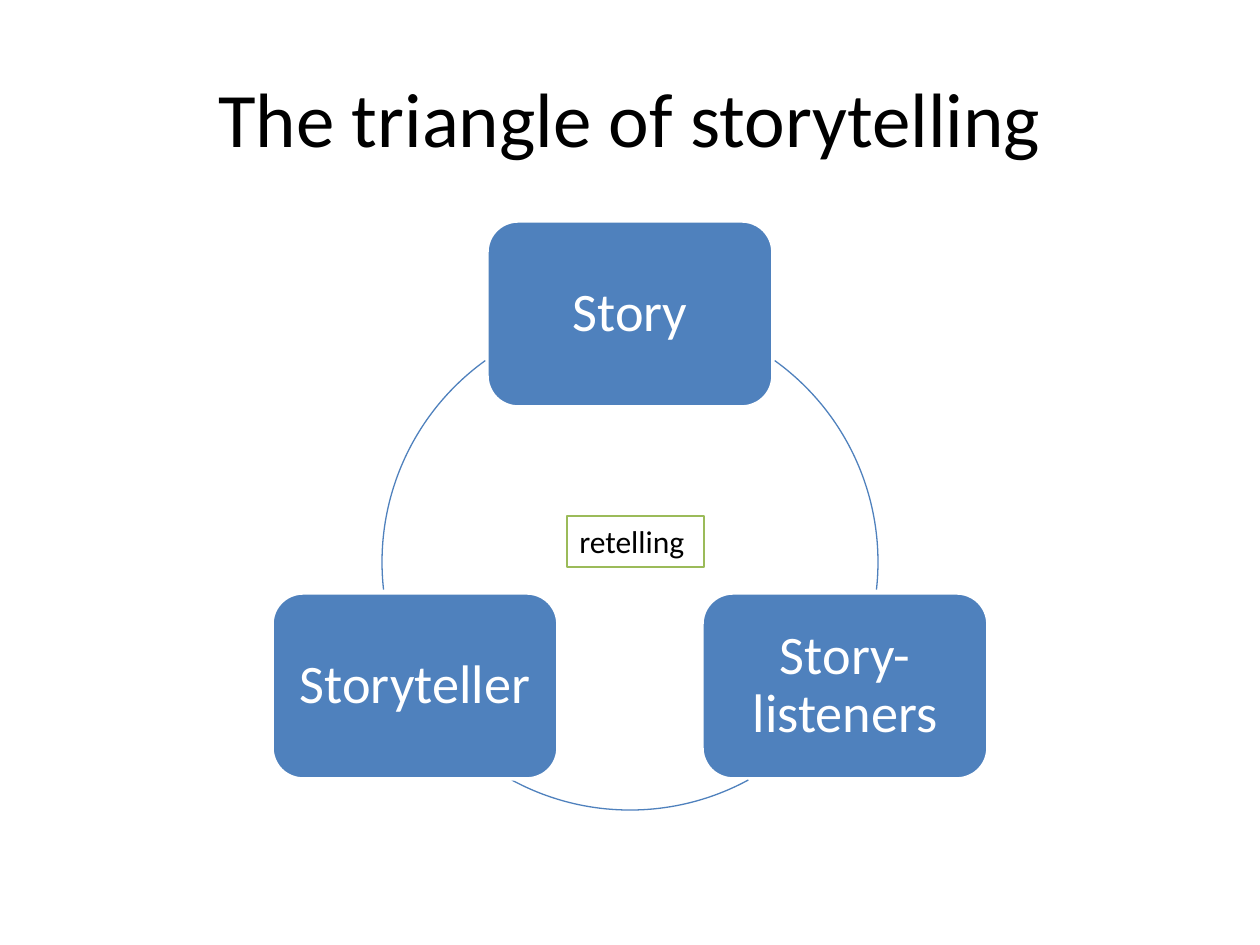
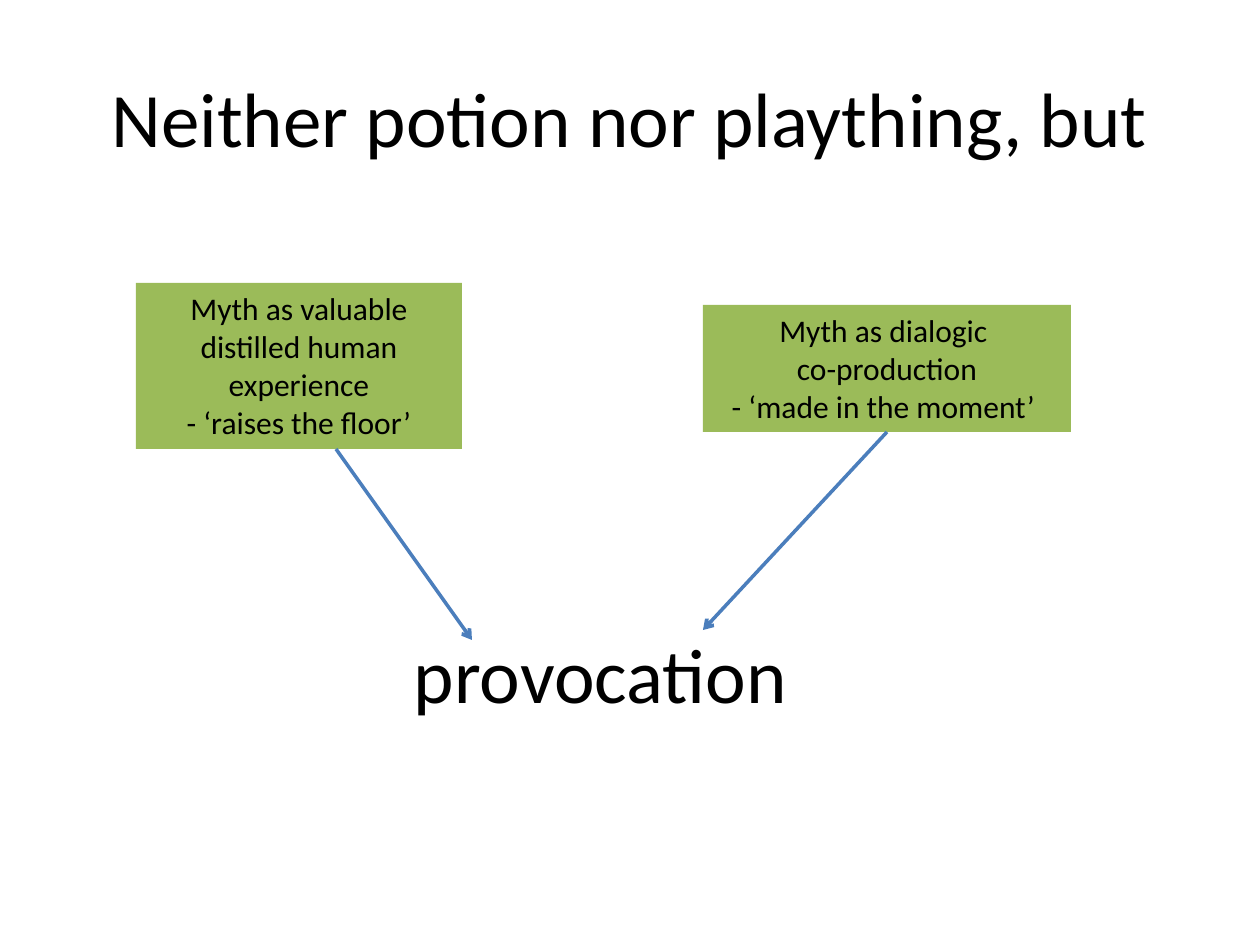
import math
from dataclasses import dataclass

import pptx
import pptx.dml.color
import pptx.enum.shapes
import pptx.enum.text
import pptx.oxml.ns
import pptx.util
from lxml import etree
from pptx.shapes.base import BaseShape
from pptx.slide import Slide

RGB = pptx.dml.color.RGBColor
SHAPE = pptx.enum.shapes.MSO_SHAPE
ALIGN = pptx.enum.text.PP_ALIGN
ANCHOR = pptx.enum.text.MSO_ANCHOR

BLACK = RGB(0x00, 0x00, 0x00)
WHITE = RGB(0xFF, 0xFF, 0xFF)
BLUE = RGB(0x4F, 0x81, 0xBD)
GREEN = RGB(0x9B, 0xBB, 0x59)
STEEL = RGB(0x4B, 0x7E, 0xBC)

FONT = "Calibri"
SCALE = 914400 / 126  # EMU in one px
TITLE = 44
BODY = 18


@dataclass(frozen=True)
class Box:
    x: int
    y: int
    w: int
    h: int


@dataclass(frozen=True)
class Node:
    text: str
    angle: int


@dataclass(frozen=True)
class Arc:
    start: float
    end: float


@dataclass(frozen=True)
class Myth:
    box: Box
    lines: tuple[str, ...]
    start: tuple[int, int]
    end: tuple[int, int]
    joined: bool


CENTRE = (630, 562)
RADIUS = 248
NODES = (Node("Story", -90), Node("Story-listeners", 30), Node("Storyteller", 150))
ARCS = (Arc(305.7, 6.4), Arc(61.5, 118.5), Arc(173.6, 234.3))
MYTHS = (
    Myth(Box(136, 283, 326, 166),
         ("Myth as valuable distilled human experience", "- ‘raises the floor’"),
         (336, 449), (472, 640), False),
    Myth(Box(703, 305, 368, 127),
         ("Myth as dialogic ", "co-production", "- ‘made in the moment’ "),
         (887, 432), (703, 630), True),
)


def px(length: float) -> int:
    return round(length * SCALE)


def place(box: Box) -> tuple[int, int, int, int]:
    return px(box.x), px(box.y), px(box.w), px(box.h)


def write(shape: BaseShape, lines: tuple[str, ...], size: int, colour: RGB = BLACK,
          align: ALIGN = ALIGN.CENTER, anchor: ANCHOR = ANCHOR.TOP) -> None:
    frame = shape.text_frame
    frame.word_wrap = True
    frame.vertical_anchor = anchor
    for i, line in enumerate(lines):
        para = frame.add_paragraph() if i else frame.paragraphs[0]
        para.alignment = align
        run = para.add_run()
        run.text = line
        run.font.name = FONT
        run.font.size = pptx.util.Pt(size)
        run.font.color.rgb = colour


def draw(slide: Slide, kind: SHAPE, box: Box, fill: RGB | None = None,
         line: RGB | None = None, width: float = 1) -> BaseShape:
    """Add a preset shape; a missing colour means no fill or no line."""
    shape = slide.shapes.add_shape(kind, *place(box))
    shape.shadow.inherit = False
    if fill is None:
        shape.fill.background()
    else:
        shape.fill.solid()
        shape.fill.fore_color.rgb = fill
    if line is None:
        shape.line.fill.background()
    else:
        shape.line.color.rgb = line
        shape.line.width = pptx.util.Pt(width)
    return shape


def add_slide(deck: pptx.presentation.Presentation, title: str) -> Slide:
    slide = deck.slides.add_slide(deck.slide_layouts.get_by_name("Title Only"))
    head = slide.shapes.title
    head.left, head.top, head.width, head.height = place(Box(63, 38, 1134, 158))
    write(head, (title,), TITLE, anchor=ANCHOR.MIDDLE)
    return slide


def add_node(slide: Slide, node: Node) -> None:
    """Centre a rounded box on the ring at the node's angle."""
    w, h = 286, 186
    turn = math.radians(node.angle)
    x = round(CENTRE[0] + RADIUS * math.cos(turn) - w / 2)
    y = round(CENTRE[1] + RADIUS * math.sin(turn) - h / 2)
    shape = draw(slide, SHAPE.ROUNDED_RECTANGLE, Box(x, y, w, h), BLUE, WHITE, 2)
    frame = shape.text_frame
    frame.margin_left = frame.margin_right = px(16)
    write(shape, (node.text,), 31, WHITE, anchor=ANCHOR.MIDDLE)
    frame.paragraphs[0].line_spacing = 0.9


def add_arc(slide: Slide, arc: Arc) -> None:
    ring = Box(CENTRE[0] - RADIUS, CENTRE[1] - RADIUS, 2 * RADIUS, 2 * RADIUS)
    shape = draw(slide, SHAPE.ARC, ring, line=BLUE, width=0.75)
    # Angles are stored in 1/60000 degree, adjustments in 1/100000.
    for i, angle in enumerate((arc.start, arc.end)):
        shape.adjustments[i] = angle * 0.6


def add_myth(slide: Slide, myth: Myth) -> None:
    shape = draw(slide, SHAPE.RECTANGLE, myth.box, GREEN)
    write(shape, myth.lines, BODY)
    arrow = slide.shapes.add_connector(
        pptx.enum.shapes.MSO_CONNECTOR.STRAIGHT,
        *(px(v) for v in myth.start + myth.end))
    if myth.joined:
        arrow.begin_connect(shape, 2)
    arrow.line.color.rgb = STEEL
    arrow.line.width = pptx.util.Pt(2)
    qn = pptx.oxml.ns.qn
    etree.SubElement(arrow.line._get_or_add_ln(), qn("a:tailEnd"), type="arrow")
    etree.SubElement(arrow._element.spPr, qn("a:effectLst"))


def triangle(deck: pptx.presentation.Presentation) -> None:
    slide = add_slide(deck, "The triangle of storytelling")
    for node, arc in zip(NODES, ARCS):
        add_node(slide, node)
        add_arc(slide, arc)
    label = draw(slide, SHAPE.RECTANGLE, Box(567, 516, 137, 51), line=GREEN, width=1.25)
    write(label, ("retelling",), BODY, align=ALIGN.LEFT)


def provoke(deck: pptx.presentation.Presentation) -> None:
    slide = add_slide(deck, "Neither potion nor plaything, but")
    for myth in MYTHS:
        add_myth(slide, myth)
    label = slide.shapes.add_textbox(*place(Box(330, 620, 541, 106)))
    write(label, ("provocation",), TITLE)


def main() -> None:
    deck = pptx.Presentation()
    deck.slide_width, deck.slide_height = px(1260), px(945)
    triangle(deck)
    provoke(deck)
    deck.save("out.pptx")


if __name__ == "__main__":
    main()
